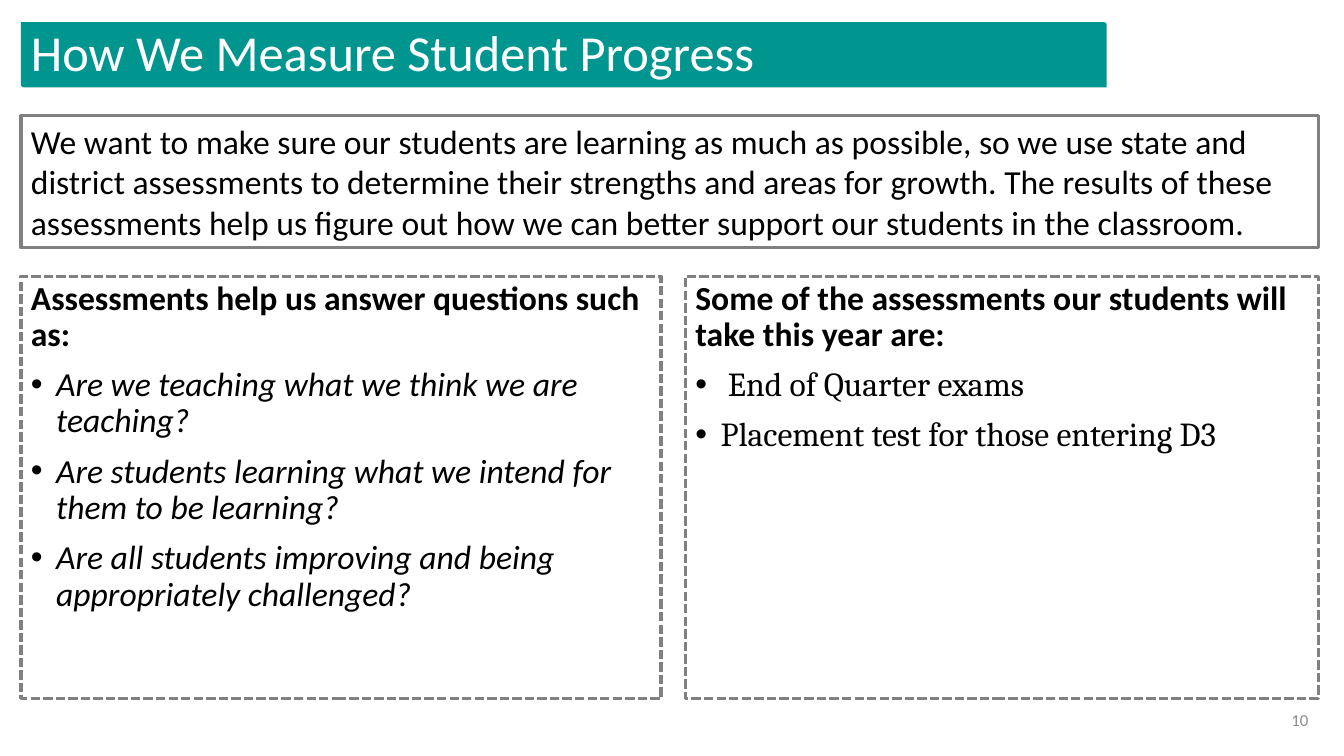
from dataclasses import dataclass

from lxml import etree
from pptx import Presentation
from pptx.dml.color import RGBColor
from pptx.enum.dml import MSO_LINE
from pptx.enum.shapes import MSO_SHAPE
from pptx.enum.text import MSO_ANCHOR, PP_ALIGN
from pptx.oxml.ns import qn
from pptx.util import Inches, Pt

RECTANGLE = MSO_SHAPE.RECTANGLE
BANNER = MSO_SHAPE.ROUND_2_DIAG_RECTANGLE
DASHED = MSO_LINE.SQUARE_DOT
SOLID = MSO_LINE.SOLID
TOP, MIDDLE = MSO_ANCHOR.TOP, MSO_ANCHOR.MIDDLE
LEFT, RIGHT = PP_ALIGN.LEFT, PP_ALIGN.RIGHT


@dataclass(frozen=True)
class Theme:
    teal: RGBColor = RGBColor(0x00, 0x95, 0x8F)
    border: RGBColor = RGBColor(0x80, 0x80, 0x80)
    ink: RGBColor = RGBColor(0, 0, 0)
    white: RGBColor = RGBColor(255, 255, 255)
    muted: RGBColor = RGBColor(0x8C, 0x8C, 0x8C)
    title_size: int = 36
    body_size: int = 24
    number_size: int = 12
    border_width: float = 2.25
    sans: str = "Calibri"
    serif: str = "Cambria"


class SlideBuilder:
    COLUMNS, ROWS = 64, 36

    def __init__(self, theme):
        self.theme = theme
        self.deck = Presentation()
        self.deck.slide_width = Inches(13.33)
        self.deck.slide_height = Inches(7.5)
        self.page = self.deck.slides.add_slide(self.deck.slide_layouts[6])

    def place(self, column, row, columns, rows):
        unit_width = self.deck.slide_width / self.COLUMNS
        unit_height = self.deck.slide_height / self.ROWS
        return [
            round(column * unit_width),
            round(row * unit_height),
            round(columns * unit_width),
            round(rows * unit_height),
        ]

    def banner(self, area):
        box = self.page.shapes.add_shape(BANNER, *self.place(*area))
        box.shadow.inherit = False
        box.adjustments[0], box.adjustments[1] = 0, 0.04
        box.fill.solid()
        box.fill.fore_color.rgb = self.theme.teal
        box.line.fill.background()

    def frame(self, area, dash):
        box = self.page.shapes.add_shape(RECTANGLE, *self.place(*area))
        box.shadow.inherit = False
        box.fill.background()
        box.line.color.rgb = self.theme.border
        box.line.width = Pt(self.theme.border_width)
        box.line.dash_style = dash
        return self.prepare(box, TOP)

    def label(self, area, text, size, color, **formats):
        box = self.page.shapes.add_textbox(*self.place(*area))
        self.prepare(box, MIDDLE)
        self.add_text(box.text_frame.paragraphs[0], text, size, color, formats)

    def prepare(self, box, anchor):
        box.text_frame.word_wrap = True
        box.text_frame.vertical_anchor = anchor
        return box

    def add_text(self, para, text, size, color, formats=None, **font_formats):
        for name, value in {"alignment": LEFT, **(formats or {})}.items():
            setattr(para, name, value)
        span = para.add_run()
        span.text = text
        font_values = {"size": Pt(size), "name": self.theme.sans, **font_formats}
        for name, value in font_values.items():
            setattr(span.font, name, value)
        span.font.color.rgb = color

    def bullet(self, para):
        properties = para._p.get_or_add_pPr()
        properties.set("marL", str(Inches(0.25)))
        properties.set("indent", str(-Inches(0.25)))
        etree.SubElement(properties, qn("a:buFont")).set("typeface", "Arial")
        etree.SubElement(properties, qn("a:buChar")).set("char", "•")

    def statement(self, area, text):
        box = self.frame(area, SOLID)
        para = box.text_frame.paragraphs[0]
        self.add_text(para, text, self.theme.body_size, self.theme.ink)

    def panel(self, area, heading, items, **item_font):
        text_frame = self.frame(area, DASHED).text_frame
        spacing = {"line_spacing": 0.9, "space_before": Pt(10)}
        style = (self.theme.body_size, self.theme.ink, spacing)
        self.add_text(text_frame.paragraphs[0], heading, *style, bold=True)
        for item in items:
            para = text_frame.add_paragraph()
            self.add_text(para, item, *style, **item_font)
            self.bullet(para)


def main():
    theme = Theme()
    builder = SlideBuilder(theme)
    title_area = (1, 1.06, 51.7, 3.1)
    builder.banner(title_area)
    builder.panel(
        (1, 13.15, 30.48, 20.11),
        "Assessments help us answer questions such as:",
        [
            "Are we teaching what we think we are teaching?",
            "Are students learning what we intend for them to be learning?",
            "Are all students improving and being appropriately challenged?",
        ],
        italic=True,
    )
    builder.panel(
        (32.64, 13.15, 30.14, 20.11),
        "Some of the assessments our students will take this year are:",
        [" End of Quarter exams", "Placement test for those entering D3"],
        name=theme.serif,
    )
    builder.label(
        (48.38, 33.31, 14.4, 1.92), "10", theme.number_size, theme.muted, alignment=RIGHT
    )
    builder.label(
        title_area,
        "How We Measure Student Progress",
        theme.title_size,
        theme.white,
        line_spacing=0.9,
    )
    builder.statement(
        (1, 5.52, 61.78, 6.29),
        "We want to make sure our students are learning as much as possible, "
        "so we use state and district assessments to determine their strengths "
        "and areas for growth. The results of these assessments help us figure "
        "out how we can better support our students in the classroom.",
    )
    builder.deck.save("out.pptx")


if __name__ == "__main__":
    main()
